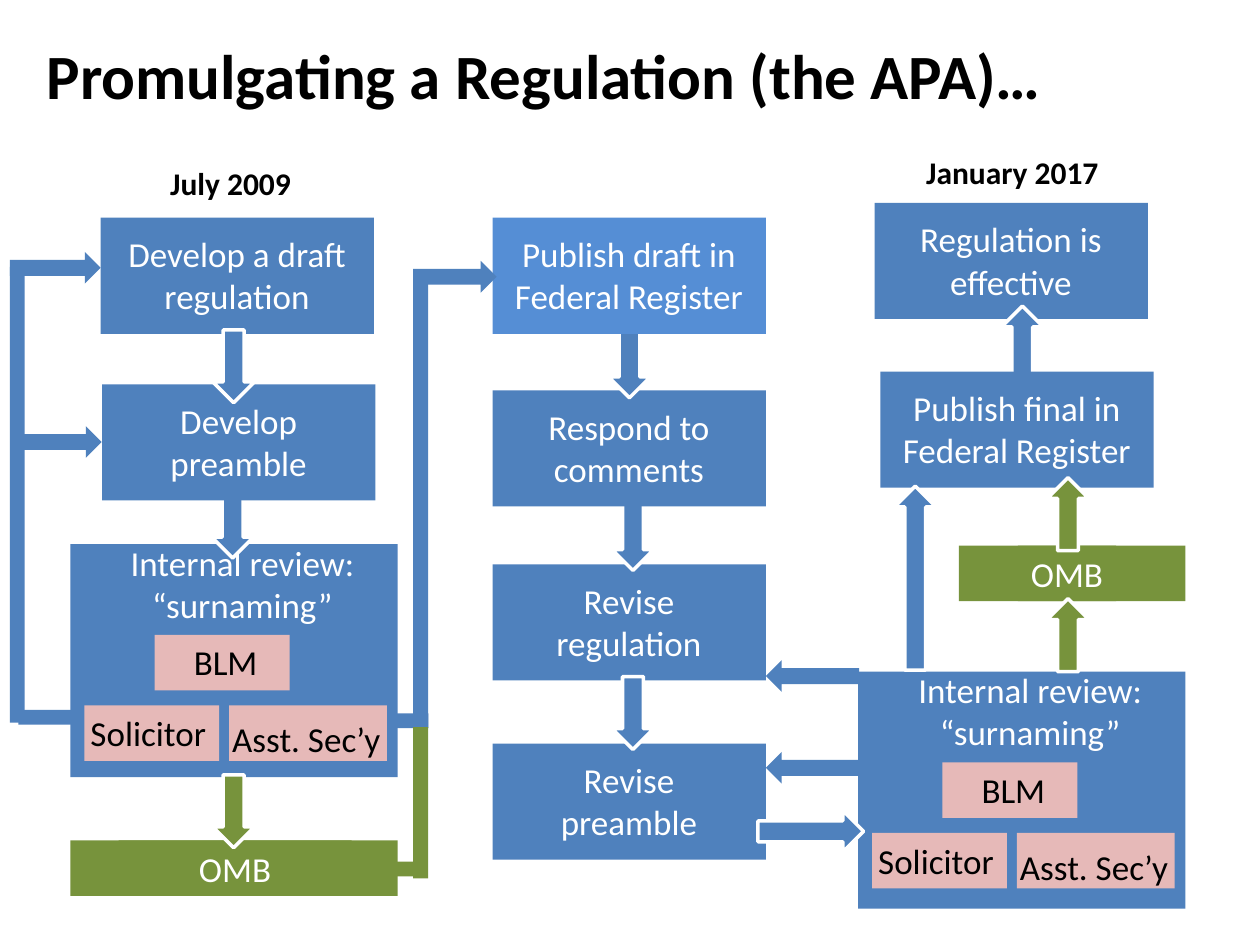
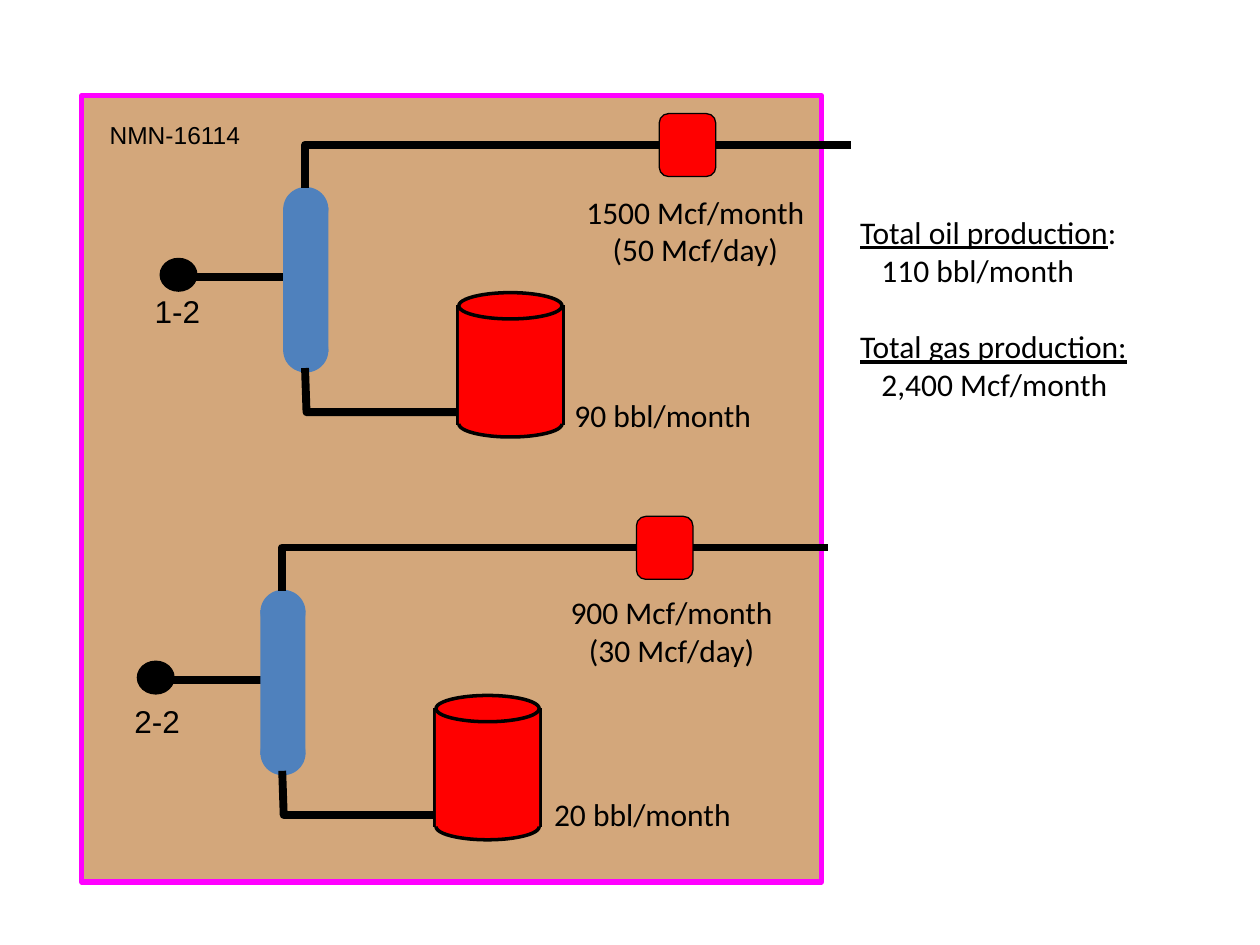
from dataclasses import dataclass

from lxml import etree
from pptx import Presentation
from pptx.dml.color import RGBColor
from pptx.enum.shapes import MSO_CONNECTOR, MSO_SHAPE
from pptx.enum.text import MSO_ANCHOR, PP_ALIGN
from pptx.oxml.ns import qn
from pptx.util import Cm, Pt

RECT, ELLIPSE, ROUND = MSO_SHAPE.RECTANGLE, MSO_SHAPE.OVAL, MSO_SHAPE.ROUNDED_RECTANGLE
RIGHT, LEFT = MSO_SHAPE.RIGHT_ARROW, MSO_SHAPE.LEFT_ARROW
UP, DOWN = MSO_SHAPE.UP_ARROW, MSO_SHAPE.DOWN_ARROW
STRAIGHT, ELBOW = MSO_CONNECTOR.STRAIGHT, MSO_CONNECTOR.ELBOW
ALIGN_LEFT, CENTER, MIDDLE = PP_ALIGN.LEFT, PP_ALIGN.CENTER, MSO_ANCHOR.MIDDLE

BLUE, LIGHT_BLUE, GREEN, PINK = "4F81BD", "558ED5", "77933C", "E6B9B8"
BLACK, WHITE, RED, TAN, MAGENTA = "000000", "FFFFFF", "FF0000", "D3A77B", "FF00FF"
BODY_FONT, TAG_FONT = "Calibri", "Arial"
STEP_W, STEP_H = 5.51, 2.34
ARROW_W, ARROW_H = 0.84, 1.47
HEAD_H, BAR, TAG_H = 0.64, 0.3, 1.12
PIPE = 4.5


@dataclass
class Block:
    """A filled shape, placed in centimetres."""
    x: float
    y: float
    w: float
    h: float
    fill: str = BLUE
    kind: MSO_SHAPE = RECT
    line: str = ""
    weight: float = 2
    text: str = ""


@dataclass
class Label:
    """A text box with one paragraph for each line of text."""
    x: float
    y: float
    w: float
    h: float
    text: str
    size: float = 18
    color: str = BLACK
    bold: bool = False
    align: PP_ALIGN = ALIGN_LEFT
    font: str = BODY_FONT


@dataclass
class Step:
    """A box of the rulemaking process."""
    x: float
    y: float
    text: str
    fill: str = BLUE


@dataclass
class Review:
    """An internal review panel with its three reviewers."""
    x: float
    y: float
    h: float


@dataclass
class Well:
    """A well with its separator, tank and gas meter."""
    x: float
    y: float
    name: Label
    oil: Label
    gas: Label


def rgb(value: str) -> RGBColor:
    """Turn a hex string into a colour."""
    return RGBColor.from_string(value)


def format_paragraph(p, size: float, color: str, bold: bool = False,
                     align: PP_ALIGN = ALIGN_LEFT, font: str = BODY_FONT) -> None:
    """Align a paragraph and format its runs."""
    p.alignment = align
    for r in p.runs:
        r.font.name, r.font.size, r.font.bold = font, Pt(size), bold
        r.font.color.rgb = rgb(color)


def draw_block(s, b: Block) -> None:
    """Draw a filled shape with optional outline and text."""
    sp = s.shapes.add_shape(b.kind, Cm(b.x), Cm(b.y), Cm(b.w), Cm(b.h))
    sp.shadow.inherit = False
    sp.fill.solid()
    sp.fill.fore_color.rgb = rgb(b.fill)
    if b.line:
        sp.line.color.rgb = rgb(b.line)
        sp.line.width = Pt(b.weight)
    else:
        sp.line.fill.background()
    if b.text:
        tf = sp.text_frame
        tf.text, tf.word_wrap, tf.vertical_anchor = b.text, False, MIDDLE
        format_paragraph(tf.paragraphs[0], 20, WHITE, align=CENTER)


def draw_label(s, b: Label):
    """Draw a text box and return its text frame."""
    tf = s.shapes.add_textbox(Cm(b.x), Cm(b.y), Cm(b.w), Cm(b.h)).text_frame
    tf.text, tf.word_wrap = b.text, True
    for p in tf.paragraphs:
        format_paragraph(p, b.size, b.color, b.bold, b.align, b.font)
    return tf


def draw_step(s, step: Step) -> None:
    """Draw a process box and its caption."""
    draw_block(s, Block(step.x, step.y, STEP_W, STEP_H, step.fill))
    draw_label(s, Label(step.x + 0.16, step.y + 0.18, 5.18, 1.96, step.text,
                        20, WHITE, align=CENTER))


def draw_review(s, v: Review) -> None:
    """Draw a review panel with its heading and reviewers."""
    draw_block(s, Block(v.x, v.y, 6.6, v.h))
    draw_label(s, Label(v.x + 0.89, v.y - 0.18, 5.16, 1.96,
                        "Internal review:\n“surnaming”", 20, WHITE, align=CENTER))
    for name, dx, dy, w, text_dx, text_dy, text_w in (
            ("BLM", 1.7, 1.83, 2.72, 1.71, 1.82, 2.84),
            ("Solicitor", 0.28, 3.25, 2.72, 0.15, 3.25, 2.84),
            ("Asst. Sec’y", 3.2, 3.25, 3.18, 2.9, 3.37, 3.71)):
        draw_block(s, Block(v.x + dx, v.y + dy, w, TAG_H, PINK))
        draw_label(s, Label(v.x + text_dx, v.y + text_dy, text_w, TAG_H, name,
                            20, align=CENTER))


def arrow(kind: MSO_SHAPE, x: float, y: float, w: float = ARROW_W,
          h: float = ARROW_H, fill: str = BLUE) -> Block:
    """Describe a white-edged arrow between boxes."""
    return Block(x, y, w, h, fill, kind, WHITE)


def style_line(line, weight: float) -> None:
    """Make a line black and of the given weight."""
    line.color.rgb = rgb(BLACK)
    line.width = Pt(weight)


def draw_line(s, x0: float, y0: float, x1: float, y1: float, weight: float,
              kind: MSO_CONNECTOR = STRAIGHT):
    """Draw a black connector without shadow."""
    c = s.shapes.add_connector(kind, Cm(x0), Cm(y0), Cm(x1), Cm(y1))
    style_line(c.line, weight)
    etree.SubElement(c._element.spPr, qn("a:effectLst"))
    return c


def draw_riser(s, x0: float, y0: float, x1: float, y1: float) -> None:
    """Draw a pipe that runs up and then right, as a quarter-turned elbow."""
    cx, cy, half_w, half_h = (x0 + x1) / 2, (y0 + y1) / 2, (y0 - y1) / 2, (x1 - x0) / 2
    c = draw_line(s, cx + half_w, cy + half_h, cx - half_w, cy - half_h, PIPE, ELBOW)
    spPr = c._element.spPr
    spPr.find(qn("a:xfrm")).set("rot", "5400000")
    spPr.find(qn("a:prstGeom")).set("prst", "bentConnector2")


def draw_drain(s, x: float, y: float) -> None:
    """Draw the pipe from the separator down to the tank."""
    fb = s.shapes.build_freeform(Cm(x), Cm(y))
    fb.add_line_segments([(Cm(x + 0.03), Cm(y + 0.89)),
                          (Cm(x + 3.18), Cm(y + 0.89))], close=False)
    sp = fb.convert_to_shape()
    sp.shadow.inherit = False
    sp.fill.background()
    style_line(sp.line, PIPE)


def draw_tank(s, x: float, y: float) -> None:
    """Draw an oil tank from its parts."""
    w, rim = 2.08, 0.53
    draw_block(s, Block(x, y + 2.23, w, 0.43, RED))
    for side in (x, x + w):
        draw_line(s, side, y + 0.25, side, y + 2.66, 3)
    draw_block(s, Block(x, y + 2.38, w, rim, RED, ELLIPSE, BLACK))
    draw_block(s, Block(x, y + 0.25, w, 2.39, RED))
    draw_block(s, Block(x, y, w, rim, RED, ELLIPSE, BLACK))


def draw_well(s, well: Well) -> None:
    """Draw a well, its equipment and its production figures."""
    x, y = well.x, well.y
    draw_block(s, Block(x, y, 0.74, 0.66, BLACK, ELLIPSE, BLACK, 0.75))
    draw_line(s, x + 0.36, y + 0.37, x + 2.62, y + 0.37, PIPE)
    draw_block(s, Block(x + 2.48, y - 1.03, 0.91, 2.92))
    for dy in (-1.44, 1.41):
        draw_block(s, Block(x + 2.48, y + dy, 0.91, 0.89, kind=ELLIPSE))
    draw_riser(s, x + 2.92, y - 1.42, x + 13.92, y - 2.29)
    draw_drain(s, x + 2.92, y + 2.21)
    draw_tank(s, x + 6.02, y + 0.69)
    draw_block(s, Block(x + 10.06, y - 2.92, 1.14, 1.27, RED, ROUND, BLACK, 0.75))
    for label in (well.name, well.oil, well.gas):
        draw_label(s, label)


DRAW = {Block: draw_block, Label: draw_label, Step: draw_step, Review: draw_review}

FLOW = [
    Label(0.69, 0.61, 25.4, 1.8, "Promulgating a Regulation (the APA)…", 36, bold=True),
    Step(2.03, 4.39, "Develop a draft regulation"),
    Block(0.2, 5.08, 1.83, HEAD_H, kind=RIGHT),
    Block(0.25, 8.59, 1.8, HEAD_H, kind=RIGHT),
    Block(0.2, 5.38, BAR, 9.19),
    Block(0.37, 14.31, 1.14, BAR),
    Review(1.42, 10.97, 4.7),
    arrow(DOWN, 4.27, 9.78),
    Step(2.06, 7.75, "Develop preamble"),
    arrow(DOWN, 4.29, 6.65),
    Step(9.93, 11.38, "Revise regulation"),
    arrow(DOWN, 12.34, 10.03),
    Step(9.93, 14.99, "Revise preamble"),
    arrow(DOWN, 12.34, 13.64),
    Step(9.93, 7.87, "Respond to comments"),
    arrow(DOWN, 12.27, 6.55),
    Review(17.3, 13.54, 4.78),
    arrow(RIGHT, 15.28, 16.34, 2.13, ARROW_W),
    Block(15.44, 15.16, 1.88, HEAD_H, kind=LEFT),
    Block(15.44, 13.31, 1.88, HEAD_H, kind=LEFT),
    Step(17.63, 4.09, "Regulation is effective"),
    arrow(UP, 20.19, 6.17),
    Step(17.75, 7.49, "Publish final in\nFederal Register"),
    arrow(UP, 18.03, 9.8, h=3.71),
    Block(1.42, 16.94, 6.6, TAG_H, GREEN),
    Block(2.39, 16.94, 4.7, TAG_H, GREEN, text="OMB"),
    arrow(DOWN, 4.29, 15.62, fill=GREEN),
    Step(9.93, 4.39, "Publish draft in\nFederal Register", LIGHT_BLUE),
    Block(8.33, 5.26, 1.68, HEAD_H, kind=RIGHT),
    Block(7.98, 14.38, 0.66, BAR),
    Block(8.33, 5.46, BAR, 9.22),
    Block(7.92, 17.37, 0.66, BAR, GREEN),
    Block(8.33, 14.66, BAR, 3.05, GREEN),
    Block(19.33, 11, 4.57, TAG_H, GREEN),
    Block(20.52, 11, 1.98, TAG_H, GREEN, text="OMB"),
    arrow(UP, 21.11, 9.63, fill=GREEN),
    arrow(UP, 21.11, 12.07, fill=GREEN),
    Label(3.18, 3.18, 4.88, 1.02, "July 2009", bold=True),
    Label(18.42, 2.97, 4.88, 1.02, "January 2017", bold=True),
]

WELLS = [
    Well(3.23, 5.21,
         Label(2.87, 5.77, 1.78, 1.02, "1-2", font=TAG_FONT),
         Label(11.33, 7.85, 4.72, 1.02, "90 bbl/month"),
         Label(11.48, 3.76, 5.08, 1.8, "1500 Mcf/month\n(50 Mcf/day)", align=CENTER)),
    Well(2.77, 13.33,
         Label(2.46, 14.02, 1.78, 1.02, "2-2", font=TAG_FONT),
         Label(10.92, 15.9, 4.72, 1.02, "20 bbl/month"),
         Label(11.18, 11.84, 4.72, 1.8, "900 Mcf/month\n(30 Mcf/day)", align=CENTER)),
]


def draw_totals(s) -> None:
    """Draw the production totals beside the lease."""
    tf = draw_label(s, Label(17.09, 4.17, 7.82, 4.11,
                             "Total oil production\n110 bbl/month\n"
                             "Total gas production:\n2,400 Mcf/month"))
    oil, oil_value, gas, gas_value = tf.paragraphs
    for p in (oil, gas):
        p.runs[0].font.underline = True
    oil.add_run().text = ":"
    format_paragraph(oil, 18, BLACK)
    gas.space_before = Pt(22)
    for p in (oil_value, gas_value):
        p._p.get_or_add_pPr().set("marL", str(Cm(0.43)))


def main() -> None:
    """Build both slides and save the file."""
    prs = Presentation()
    prs.slide_width, prs.slide_height = Cm(25.4), Cm(19.05)
    blank = prs.slide_layouts[6]

    s = prs.slides.add_slide(blank)
    for item in FLOW:
        DRAW[type(item)](s, item)

    s = prs.slides.add_slide(blank)
    draw_block(s, Block(1.65, 1.93, 14.91, 15.85, TAN, line=MAGENTA, weight=3))
    draw_label(s, Label(1.96, 2.29, 3.63, 0.84, "NMN-16114", 14, font=TAG_FONT))
    for well in WELLS:
        draw_well(s, well)
    draw_totals(s)

    prs.save("out.pptx")


if __name__ == "__main__":
    main()
